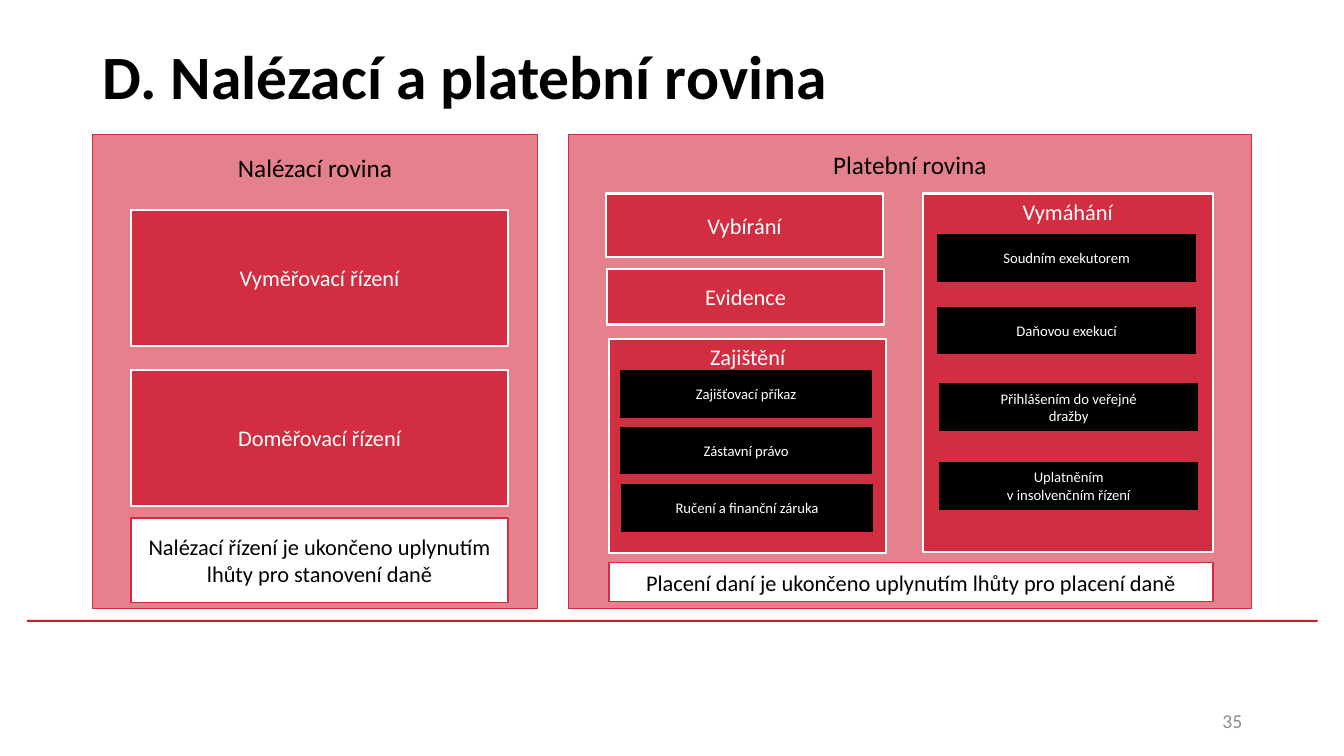
from dataclasses import dataclass

from pptx import Presentation
from pptx.dml.color import RGBColor
from pptx.enum.shapes import MSO_SHAPE
from pptx.enum.text import MSO_ANCHOR, MSO_AUTO_SIZE, PP_ALIGN
from pptx.util import Inches, Pt

TITLE = "D. Nalézací a platební rovina"
PAGE_NUMBER = "35"

# Each box: lines of text, (left, top, width, height), kind, top inset
PANELS = [
    (["Nalézací rovina"], (0.92, 1.33, 4.41, 4.71), "panel", 0.18),
    (["Platební rovina"], (5.64, 1.33, 6.77, 4.71), "panel", 0.15),
]
STAGES = [
    (["Vyměřovací řízení"], (1.3, 2.08, 3.74, 1.35), "stage", 0.05),
    (["Doměřovací řízení"], (1.3, 3.67, 3.74, 1.35), "stage", 0.05),
    (["Vybírání"], (6.01, 1.92, 2.75, 0.63), "stage", 0.05),
    (["Evidence"], (6.02, 2.67, 2.75, 0.55), "stage", 0.05),
    (["Zajištění"], (6.04, 3.36, 2.75, 2.13), "group", 0.05),
    (["Vymáhání"], (9.15, 1.92, 2.88, 3.56), "group", 0.05),
]
NOTES = [
    (["Nalézací řízení je ukončeno uplynutím", "lhůty pro stanovení daně"],
     (1.3, 5.14, 3.74, 0.84), "note", 0.05),
    (["Placení daní je ukončeno uplynutím lhůty pro placení daně"],
     (6.04, 5.58, 5.99, 0.39), "note", 0.05),
]
# Each stack of tools: width, then (left, top, lines) of every tool
TOOL_HEIGHT = 0.46
TOOL_STACKS = [
    (2.48, [
        (6.16, 3.68, ["Zajišťovací příkaz"]),
        (6.16, 4.24, ["Zástavní právo"]),
        (6.17, 4.81, ["Ručení a finanční záruka"]),
    ]),
    (2.56, [
        (9.3, 2.33, ["Soudním exekutorem"]),
        (9.3, 3.05, ["Daňovou exekucí"]),
        (9.32, 3.81, ["Přihlášením do veřejné", "dražby"]),
        (9.32, 4.59, ["Uplatněním", "v insolvenčním řízení"]),
    ]),
]


@dataclass(frozen=True)
class Theme:
    font: str = "Calibri"
    black: str = "000000"
    white: str = "FFFFFF"
    red: str = "D22D40"
    pink: str = "E4818C"
    rule: str = "CD1F21"
    grey: str = "8C8C8C"
    title: float = 44
    heading: float = 18
    body: float = 16
    number: float = 14
    small: float = 10.5


THEME = Theme()
TOP, MIDDLE = MSO_ANCHOR.TOP, MSO_ANCHOR.MIDDLE
# Kind: fill, line, line width, text colour, size, anchor, wrap
KINDS = {
    "panel": (THEME.pink, THEME.red, 0.5, THEME.black, THEME.heading, TOP, True),
    "stage": (THEME.red, THEME.white, 1.5, THEME.white, THEME.body, MIDDLE, True),
    "group": (THEME.red, THEME.white, 1.5, THEME.white, THEME.body, TOP, True),
    "tool": (THEME.black, THEME.black, 1, THEME.white, THEME.small, MIDDLE, False),
    "note": (THEME.white, THEME.red, 1, THEME.black, THEME.body, MIDDLE, False),
}


def write(frame, lines, size, color, align, bold=False):
    for index, line in enumerate(lines):
        para = frame.add_paragraph() if index else frame.paragraphs[0]
        para.alignment = align
        span = para.add_run()
        span.text = line
        formats = {"name": THEME.font, "size": Pt(size), "bold": bold}
        for name, value in formats.items():
            setattr(span.font, name, value)
        span.font.color.rgb = RGBColor.from_string(color)


def add_rectangle(page, place, fill):
    box = page.shapes.add_shape(MSO_SHAPE.RECTANGLE, *map(Inches, place))
    box.shadow.inherit = False
    box.fill.solid()
    box.fill.fore_color.rgb = RGBColor.from_string(fill)
    return box


def add_box(page, lines, place, kind, inset=0.05):
    fill, line, line_width, color, size, anchor, wrap = KINDS[kind]
    box = add_rectangle(page, place, fill)
    box.line.color.rgb = RGBColor.from_string(line)
    box.line.width = Pt(line_width)
    formats = {"word_wrap": wrap, "vertical_anchor": anchor,
               "margin_top": Inches(inset)}
    for name, value in formats.items():
        setattr(box.text_frame, name, value)
    write(box.text_frame, lines, size, color, PP_ALIGN.CENTER)


def add_title(page):
    title = page.shapes.title
    places = map(Inches, (0.92, 0.02, 11.5, 1.45))
    for name, value in zip(("left", "top", "width", "height"), places):
        setattr(title, name, value)
    title.text_frame.auto_size = MSO_AUTO_SIZE.NONE
    title.text_frame.vertical_anchor = MIDDLE
    write(title.text_frame, [TITLE], THEME.title, THEME.black, PP_ALIGN.LEFT, True)


def add_page_number(page):
    box = page.shapes.add_textbox(*map(Inches, (9.42, 6.95, 3, 0.4)))
    box.text_frame.word_wrap = True
    box.text_frame.vertical_anchor = MIDDLE
    write(box.text_frame, [PAGE_NUMBER], THEME.number, THEME.grey, PP_ALIGN.RIGHT)


def main():
    deck = Presentation()
    deck.slide_width, deck.slide_height = Inches(13.33), Inches(7.5)
    page = deck.slides.add_slide(deck.slide_layouts[5])
    rule = add_rectangle(page, (0.27, 6.15, 12.8, 0.02), THEME.rule)
    rule.line.fill.background()
    add_title(page)
    add_page_number(page)
    for box in PANELS + STAGES + NOTES:
        add_box(page, *box)
    for width, tools in TOOL_STACKS:
        for left, top, lines in tools:
            add_box(page, lines, (left, top, width, TOOL_HEIGHT), "tool")
    deck.save("out.pptx")


if __name__ == "__main__":
    main()
